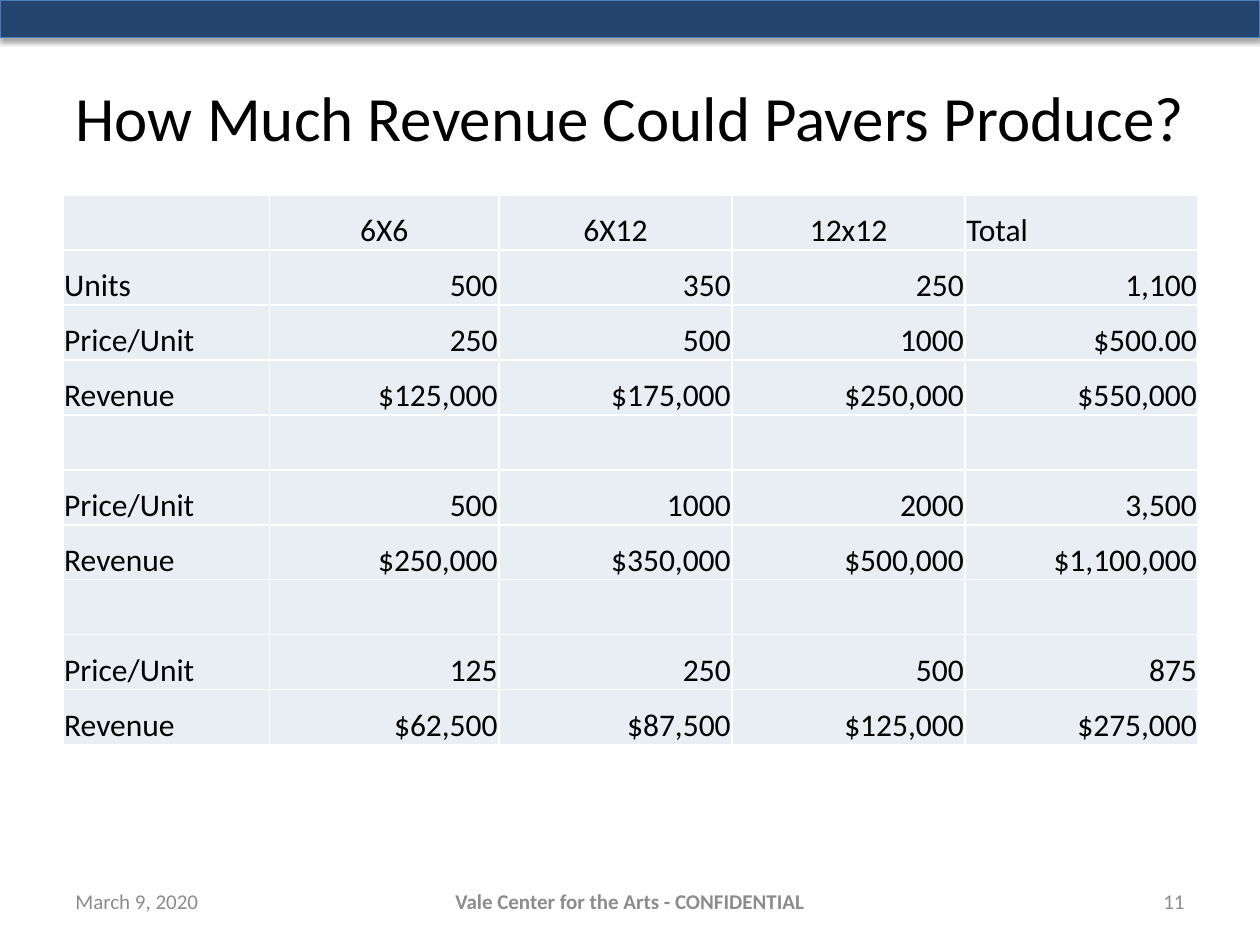
from lxml.etree import SubElement
from pptx import Presentation
from pptx.dml.color import RGBColor
from pptx.enum.shapes import MSO_SHAPE
from pptx.enum.text import MSO_ANCHOR, PP_ALIGN
from pptx.oxml.ns import qn
from pptx.util import Inches, Pt

COLORS = {
    "text": "000000",
    "footer": "8C8C8C",
    "cell": "E9EDF4",
    "border": "FFFFFF",
    "band": "22446D",
    "band_line": "4B7EBC",
    "shadow": "000000",
}
FONT = "Calibri"
TITLE = "How Much Revenue Could Pavers Produce?"
REVENUE_ROWS = [
    ("", "6X6", "6X12", "12x12", "Total"),
    ("Units", "500", "350", "250", "1,100"),
    ("Price/Unit", "250", "500", "1000", "$500.00"),
    ("Revenue", "$125,000", "$175,000", "$250,000", "$550,000"),
    ("",) * 5,
    ("Price/Unit", "500", "1000", "2000", "3,500"),
    ("Revenue", "$250,000", "$350,000", "$500,000", "$1,100,000"),
    ("",) * 5,
    ("Price/Unit", "125", "250", "500", "875"),
    ("Revenue", "$62,500", "$87,500", "$125,000", "$275,000"),
]
COLUMN_WIDTHS = (1.64, 1.82, 1.85, 1.85, 1.85)
ROW_HEIGHT = 0.436
HEADER_ALIGNS = (PP_ALIGN.LEFT,) + (PP_ALIGN.CENTER,) * 3 + (PP_ALIGN.LEFT,)
VALUE_ALIGNS = (PP_ALIGN.LEFT,) + (PP_ALIGN.RIGHT,) * 4
FOOTERS = [
    ("March 9, 2020", 2.33, PP_ALIGN.LEFT, False),
    ("Vale Center for the Arts - CONFIDENTIAL", 4.34, PP_ALIGN.CENTER, True),
    ("11", 2.33, PP_ALIGN.RIGHT, False),
]


def color(name):
    """Return the named colour."""
    return RGBColor.from_string(COLORS[name])


def write(frame, text, size, align, tone="text", bold=False):
    """Set one paragraph of text and format its runs."""
    frame.word_wrap = True
    paragraph = frame.paragraphs[0]
    paragraph.text = text
    paragraph.alignment = align
    paragraph.font.size = Pt(size)
    for run in paragraph.runs:
        run.font.name = FONT
        run.font.size = Pt(size)
        run.font.bold = bold
        run.font.color.rgb = color(tone)


def add_title(slide):
    """Fill and place the title placeholder."""
    title = slide.shapes.title
    title.left, title.top = Inches(0.5), Inches(0.3)
    title.width, title.height = Inches(9), Inches(1.25)
    frame = title.text_frame
    frame.vertical_anchor = MSO_ANCHOR.MIDDLE
    frame.margin_left = frame.margin_right = Inches(0.05)
    write(frame, TITLE, 36, PP_ALIGN.CENTER)


def add_footers(slide):
    """Place the footer texts side by side."""
    left = 0.5
    for text, width, align, bold in FOOTERS:
        footer = slide.shapes.add_textbox(
            Inches(left), Inches(6.95), Inches(width), Inches(0.4)
        )
        footer.text_frame.vertical_anchor = MSO_ANCHOR.MIDDLE
        write(footer.text_frame, text, 12, align, "footer", bold)
        left += width


def style_cell(cell):
    """Give a cell its margins, borders and fill."""
    cell.vertical_anchor = MSO_ANCHOR.BOTTOM
    cell.margin_left = cell.margin_right = cell.margin_top = Inches(0.01)
    cell.margin_bottom = 0
    properties = cell._tc.get_or_add_tcPr()
    for side in ("L", "R", "T", "B"):
        border = SubElement(properties, qn(f"a:ln{side}"), w=str(Pt(1)))
        fill = SubElement(border, qn("a:solidFill"))
        SubElement(fill, qn("a:srgbClr"), val=COLORS["border"])
    cell.fill.solid()
    cell.fill.fore_color.rgb = color("cell")


def add_revenue_table(slide):
    """Build the revenue table."""
    table = slide.shapes.add_table(
        len(REVENUE_ROWS), len(COLUMN_WIDTHS), Inches(0.5), Inches(1.55),
        Inches(sum(COLUMN_WIDTHS)), Inches(ROW_HEIGHT * len(REVENUE_ROWS)),
    ).table
    table.first_row = table.horz_banding = False
    for column, width in zip(table.columns, COLUMN_WIDTHS):
        column.width = Inches(width)
    for row_index, values in enumerate(REVENUE_ROWS):
        table.rows[row_index].height = Inches(ROW_HEIGHT)
        aligns = VALUE_ALIGNS if row_index else HEADER_ALIGNS
        for column_index, (value, align) in enumerate(zip(values, aligns)):
            cell = table.cell(row_index, column_index)
            style_cell(cell)
            write(cell.text_frame, value, 18, align)


def add_band(slide):
    """Draw the shadowed band along the top edge."""
    band = slide.shapes.add_shape(
        MSO_SHAPE.RECTANGLE, 0, 0, Inches(10), Inches(0.3)
    )
    band.fill.solid()
    band.fill.fore_color.rgb = color("band")
    band.line.color.rgb = color("band_line")
    band.line.width = Pt(0.75)
    band.shadow.inherit = False
    effects = band._element.spPr.find(qn("a:effectLst"))
    shadow = SubElement(
        effects, qn("a:outerShdw"), blurRad=str(Pt(3.1)), dist=str(Pt(1.8)),
        dir="5400000", rotWithShape="0",
    )
    shade = SubElement(shadow, qn("a:srgbClr"), val=COLORS["shadow"])
    SubElement(shade, qn("a:alpha"), val="35000")


def main():
    """Build and save the slide."""
    presentation = Presentation()
    presentation.slide_width = Inches(10)
    presentation.slide_height = Inches(7.5)
    slide = presentation.slides.add_slide(presentation.slide_layouts[5])
    add_title(slide)
    add_footers(slide)
    add_revenue_table(slide)
    add_band(slide)
    presentation.save("out.pptx")


if __name__ == "__main__":
    main()
